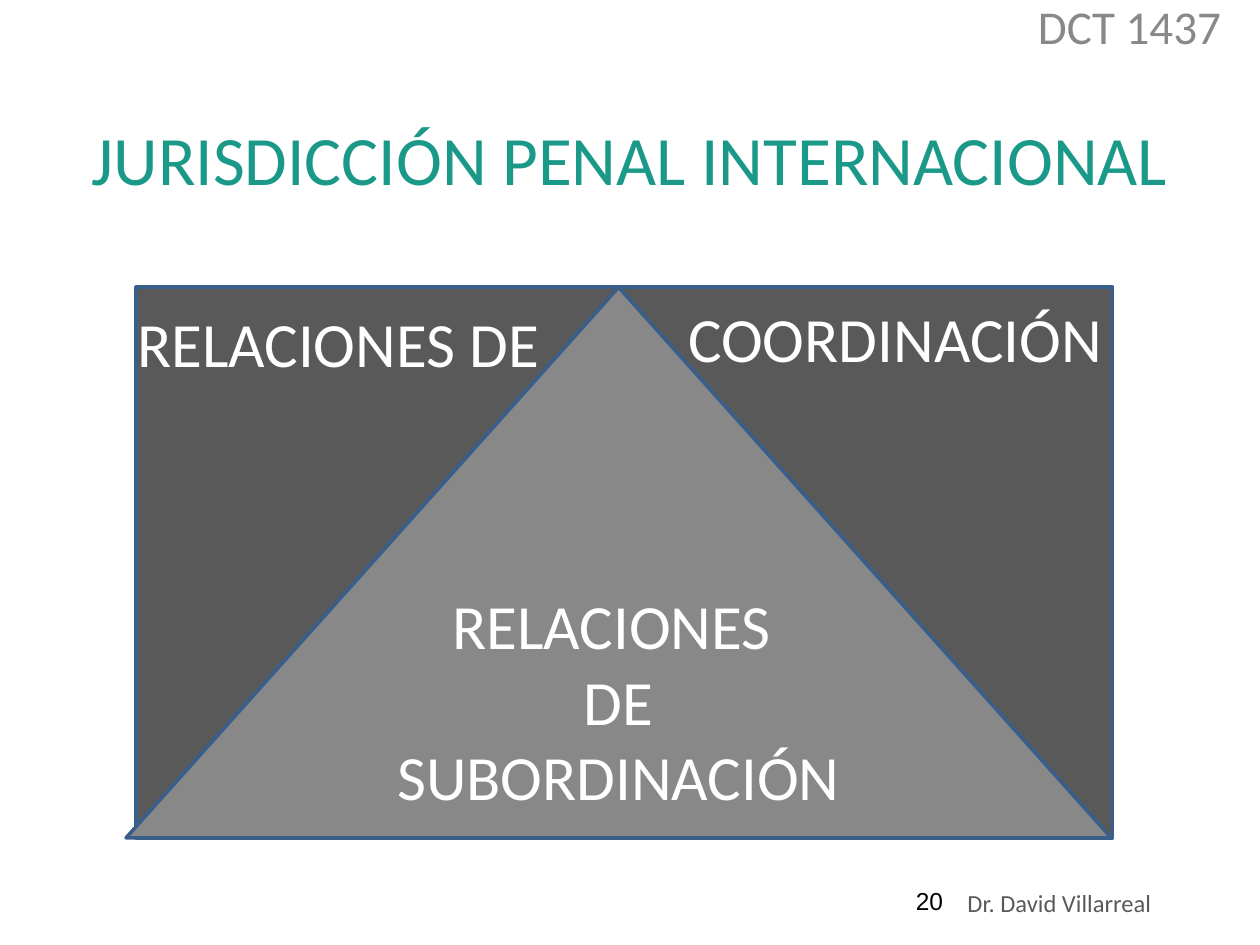
from pptx import Presentation
from pptx.dml.color import RGBColor
from pptx.enum import shapes, text
from pptx.util import Inches, Pt

WHITE, DARK, GREY, TEAL, BLUE = "FFFFFF", "595959", "888888", "1A9988", "395E89"
TOP, MIDDLE = text.MSO_ANCHOR.TOP, text.MSO_ANCHOR.MIDDLE
LEFT, CENTER = text.PP_ALIGN.LEFT, text.PP_ALIGN.CENTER

# wording, (left, top, width, height), size, colour
TITLE = ("JURISDICCIÓN PENAL INTERNACIONAL", (0.5, 0.63, 9, 1.25), 39.6, TEAL)
COURSE = ("DCT 1437", (7.71, 0.02, 2.51, 0.57), 26.9, GREY)
SUBORDINATION = "RELACIONES \nDE SUBORDINACIÓN"
COORDINATION = (1.08, 2.28, 7.75, 4.37)
PYRAMID = (1, 2.28, 7.82, 4.37)

# the same, then font, alignment, anchor, top and bottom inset
LABELS = [
    ("20", (7.17, 6.95, 2.33, 0.4), 14, "000000", "Arial", LEFT, MIDDLE, 0.05),
    ("Dr. David Villarreal", (7.58, 6.95, 2.59, 0.3), 14, DARK, "Calibri", LEFT, TOP, 0.1),
    ("RELACIONES DE", (0.88, 2.32, 3.61, 2.45), 36, WHITE, "Calibri", CENTER, TOP, 0.1),
    ("COORDINACIÓN", (5.13, 2.28, 3.95, 1.53), 36, WHITE, "Calibri", CENTER, TOP, 0.1),
]


def colour(value):
    return RGBColor.from_string(value)


def place(shape, box):
    shape.left, shape.top, shape.width, shape.height = map(Inches, box)


def write(shape, words, size, ink, font="Calibri", align=CENTER, anchor=MIDDLE, inset=0.05):
    frame = shape.text_frame
    frame.text = words
    frame.word_wrap = True
    frame.auto_size = text.MSO_AUTO_SIZE.NONE
    frame.vertical_anchor = anchor
    frame.margin_left = frame.margin_right = Inches(0.1)
    frame.margin_top = frame.margin_bottom = Inches(inset)
    for para in frame.paragraphs:
        para.alignment = align
        for span in para.runs:
            span.font.size = Pt(size)
            span.font.name = font
            span.font.color.rgb = colour(ink)


def add_block(page, kind, box, fill):
    block = page.shapes.add_shape(kind, *map(Inches, box))
    block.shadow.inherit = False
    block.fill.solid()
    block.fill.fore_color.rgb = colour(fill)
    block.line.color.rgb = colour(BLUE)
    block.line.width = Pt(2)
    return block


def main():
    deck = Presentation()
    deck.slide_width, deck.slide_height = Inches(10), Inches(7.5)
    page = deck.slides.add_slide(deck.slide_layouts[0])

    title, course = page.shapes.title, page.placeholders[1]
    for holder, (words, box, size, ink), anchor in ((title, TITLE, MIDDLE), (course, COURSE, TOP)):
        place(holder, box)
        write(holder, words, size, ink, anchor=anchor)
    para = course.text_frame.paragraphs[0]
    para.line_spacing = 0.8
    para.space_before, para.space_after = Pt(5.4), Pt(16)

    add_block(page, shapes.MSO_SHAPE.RECTANGLE, COORDINATION, DARK)
    pyramid = add_block(page, shapes.MSO_SHAPE.ISOSCELES_TRIANGLE, PYRAMID, GREY)
    write(pyramid, SUBORDINATION, 36, WHITE)

    for words, box, *style in LABELS:
        write(page.shapes.add_textbox(*map(Inches, box)), words, *style)

    deck.save("out.pptx")


if __name__ == "__main__":
    main()
